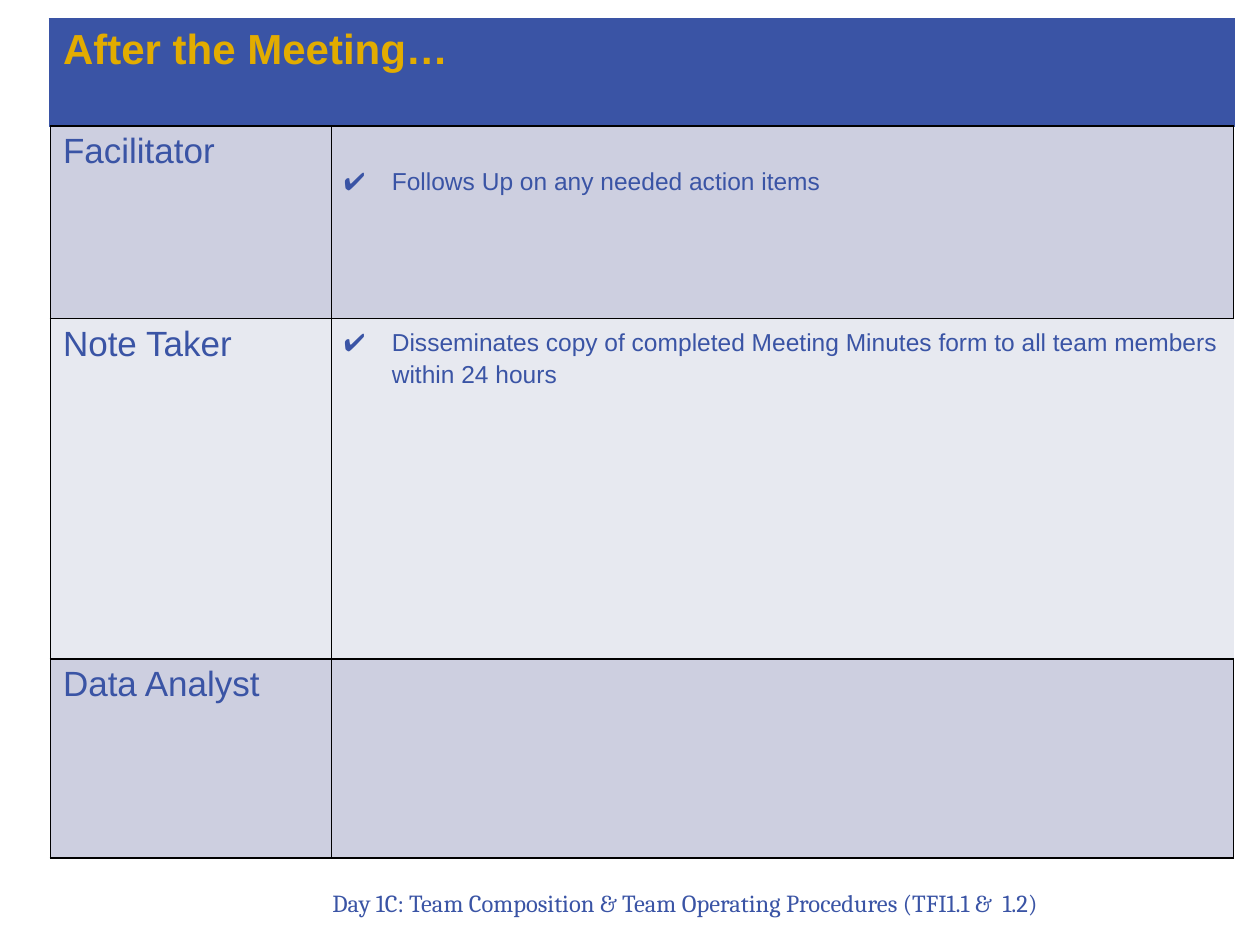
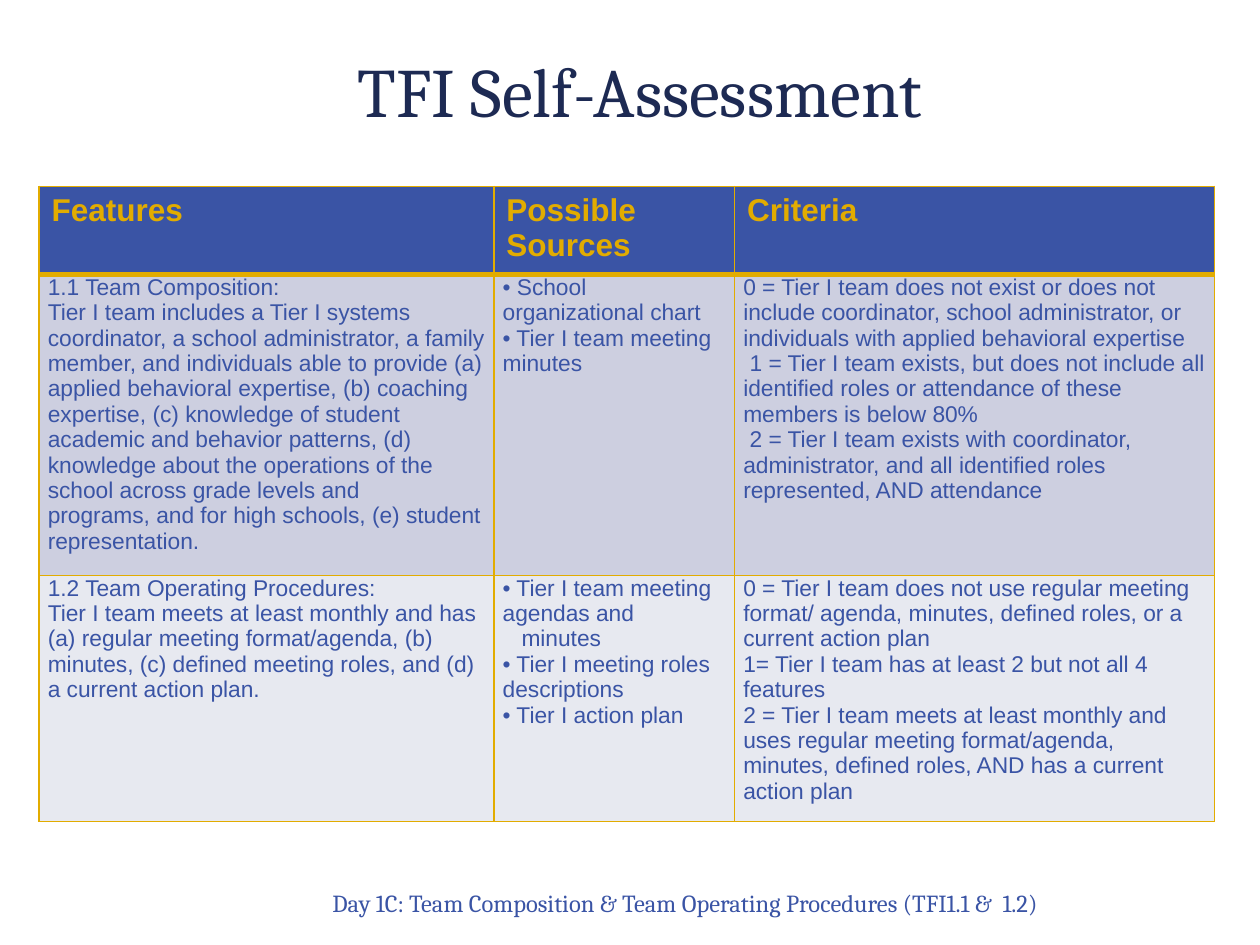
from lxml.etree import SubElement
from pptx import Presentation
from pptx.dml.color import RGBColor
from pptx.enum.text import MSO_ANCHOR, PP_ALIGN
from pptx.oxml.ns import qn
from pptx.util import Inches, Pt

BLUE = RGBColor(0x3A, 0x54, 0xA5)
NAVY = RGBColor(0x1D, 0x2A, 0x53)
GOLD = RGBColor(0xE2, 0xAC, 0x00)
BLACK = RGBColor(0x00, 0x00, 0x00)
LAVENDER = RGBColor(0xCD, 0xCF, 0xE0)
PALE = RGBColor(0xE7, 0xE9, 0xF0)

BODY_FONT = "Arial"
TITLE_FONT = "Cambria"
FOOTER = "Day 1C: Team Composition & Team Operating Procedures (TFI1.1 &  1.2)"
TITLE_ONLY, BLANK = 5, 6
ROOMY = (0.1, 0.05)
TIGHT = (0.07, 0)
CHECK_INDENT = 0.38

ROLES = [
    ("Facilitator", "Follows Up on any needed action items", LAVENDER),
    ("Note Taker", "Disseminates copy of completed Meeting Minutes form to all "
     "team members within 24 hours", PALE),
    ("Data Analyst", "", LAVENDER),
]

HEADINGS = ["Features", "Possible Sources", "Criteria"]
ASSESSMENT = [
    [
        ["1.1 Team Composition:",
         "Tier I team includes a Tier I systems coordinator, a school administrator, "
         "a family member, and individuals able to provide (a) applied behavioral "
         "expertise, (b) coaching expertise, (c) knowledge of student academic and "
         "behavior patterns, (d) knowledge about the operations of the school across "
         "grade levels and",
         "programs, and for high schools, (e) student representation."],
        ["• School organizational chart",
         "• Tier I team meeting minutes"],
        ["0 = Tier I team does not exist or does not include coordinator, school "
         "administrator, or individuals with applied behavioral expertise",
         ("1 = Tier I team exists, but does not include all identified roles or "
          "attendance of these members is below 80%", 0.05),
         ("2 = Tier I team exists with coordinator, administrator, and all identified "
          "roles represented, AND attendance", 0.05)],
    ],
    [
        ["1.2 Team Operating Procedures:",
         "Tier I team meets at least monthly and has (a) regular meeting "
         "format/agenda, (b) minutes, (c) defined meeting roles, and (d) a current "
         "action plan."],
        ["• Tier I team meeting agendas and",
         ("minutes", 0.15),
         "• Tier I meeting roles descriptions",
         "• Tier I action plan"],
        ["0 = Tier I team does not use regular meeting format/ agenda, minutes, "
         "defined roles, or a current action plan",
         "1= Tier I team has at least 2 but not all 4 features",
         "2 = Tier I team meets at least monthly and uses regular meeting "
         "format/agenda, minutes, defined roles, AND has a current action plan"],
    ],
]


def add_span(para, text, size, color, font=BODY_FONT, bold=False):
    span = para.add_run()
    span.text = text
    span.font.size = Pt(size)
    span.font.name = font
    span.font.bold = bold
    span.font.color.rgb = color


def set_indent(para, first_line, left=0):
    properties = para._p.get_or_add_pPr()
    properties.set("marL", str(Inches(left)))
    properties.set("indent", str(Inches(first_line)))
    return properties


def add_check_mark(para):
    properties = set_indent(para, -CHECK_INDENT, CHECK_INDENT)
    color = SubElement(properties, qn("a:buClr"))
    SubElement(color, qn("a:srgbClr"), val=str(BLUE))
    SubElement(properties, qn("a:buFont"), typeface=BODY_FONT)
    SubElement(properties, qn("a:buChar"), char="✔")
    para.line_spacing = 1.15


def set_borders(cell, color, **changes):
    properties = cell._tc.get_or_add_tcPr()
    for side in ("L", "R", "T", "B"):
        side_color, width = changes.get(side, (color, 1))
        line = SubElement(properties, qn("a:ln" + side), w=str(Pt(width)))
        if side_color is None:
            SubElement(line, qn("a:noFill"))
        else:
            fill = SubElement(line, qn("a:solidFill"))
            SubElement(fill, qn("a:srgbClr"), val=str(side_color))


def style_cell(cell, fill, border, margins=ROOMY, **changes):
    set_borders(cell, border, **changes)
    cell.fill.solid()
    cell.fill.fore_color.rgb = fill
    across, down = margins
    cell.margin_left = cell.margin_right = Inches(across)
    cell.margin_top = cell.margin_bottom = Inches(down)


def write_lines(cell, lines, size, color, bold=False):
    frame = cell.text_frame
    for number, line in enumerate(lines):
        text, indent = (line, 0) if isinstance(line, str) else line
        para = frame.add_paragraph() if number else frame.paragraphs[0]
        if indent:
            set_indent(para, indent)
        add_span(para, text, size, color, bold=bold)


def add_grid(page, left, top, widths, heights):
    table = page.shapes.add_table(
        len(heights), len(widths), Inches(left), Inches(top),
        Inches(sum(widths)), Inches(sum(heights))).table
    table.horz_banding = False
    for column, width in zip(table.columns, widths):
        column.width = Inches(width)
    for row, height in zip(table.rows, heights):
        row.height = Inches(height)
    return table


def add_footer(page):
    box = page.shapes.add_textbox(Inches(1.48), Inches(6.69), Inches(6.86), Inches(0.64))
    frame = box.text_frame
    frame.word_wrap = True
    frame.vertical_anchor = MSO_ANCHOR.BOTTOM
    para = frame.paragraphs[0]
    para.alignment = PP_ALIGN.RIGHT
    add_span(para, FOOTER, 14, BLUE, TITLE_FONT)


def add_title(page, text):
    title = page.shapes.title
    title.left, title.top = Inches(1), Inches(0.32)
    title.width, title.height = Inches(8.16), Inches(0.79)
    title.text_frame.vertical_anchor = MSO_ANCHOR.MIDDLE
    para = title.text_frame.paragraphs[0]
    para.alignment = PP_ALIGN.CENTER
    add_span(para, text, 39.6, NAVY, TITLE_FONT)


def add_page(deck, layout):
    page = deck.slides.add_slide(deck.slide_layouts[layout])
    add_footer(page)
    return page


def add_roles_page(deck):
    page = add_page(deck, BLANK)
    table = add_grid(page, 0.4, 0.16, [2.23, 7.16], [0.84, 1.53, 2.7, 1.58])
    header = table.cell(0, 0)
    header.merge(table.cell(0, 1))
    edge = (BLUE, 2.25)
    for column in range(2):
        style_cell(table.cell(0, column), BLUE, BLACK, L=edge, T=edge, R=edge)
    write_lines(header, ["After the Meeting…"], 24, GOLD, bold=True)
    for row, (role, task, fill) in enumerate(ROLES, 1):
        role_cell, task_cell = table.cell(row, 0), table.cell(row, 1)
        style_cell(role_cell, fill, BLACK)
        write_lines(role_cell, [role], 20, BLUE)
        open_side = {"R": (None, 1)} if fill == PALE else {}
        style_cell(task_cell, fill, BLACK, **open_side)
        if task:
            para = task_cell.text_frame.paragraphs[0]
            add_check_mark(para)
            add_span(para, task, 14, BLUE)
    table.cell(1, 1).margin_top = Inches(0.3)


def add_assessment_page(deck):
    page = add_page(deck, TITLE_ONLY)
    add_title(page, "TFI Self-Assessment")
    table = add_grid(page, 0.31, 1.48, [3.61, 1.91, 3.81], [0.66, 2.29, 1.81])
    rule = (GOLD, 3)
    for column, heading in enumerate(HEADINGS):
        cell = table.cell(0, column)
        style_cell(cell, BLUE, GOLD, B=rule)
        write_lines(cell, [heading], 18, GOLD, bold=True)
    for row, (entries, fill) in enumerate(zip(ASSESSMENT, (LAVENDER, PALE)), 1):
        above = {"T": rule} if row == 1 else {}
        for column, lines in enumerate(entries):
            cell = table.cell(row, column)
            style_cell(cell, fill, GOLD, TIGHT, **above)
            write_lines(cell, lines, 13, BLUE)


def main():
    deck = Presentation()
    deck.slide_width, deck.slide_height = Inches(10), Inches(7.5)
    add_roles_page(deck)
    add_assessment_page(deck)
    deck.save("out.pptx")


if __name__ == "__main__":
    main()
